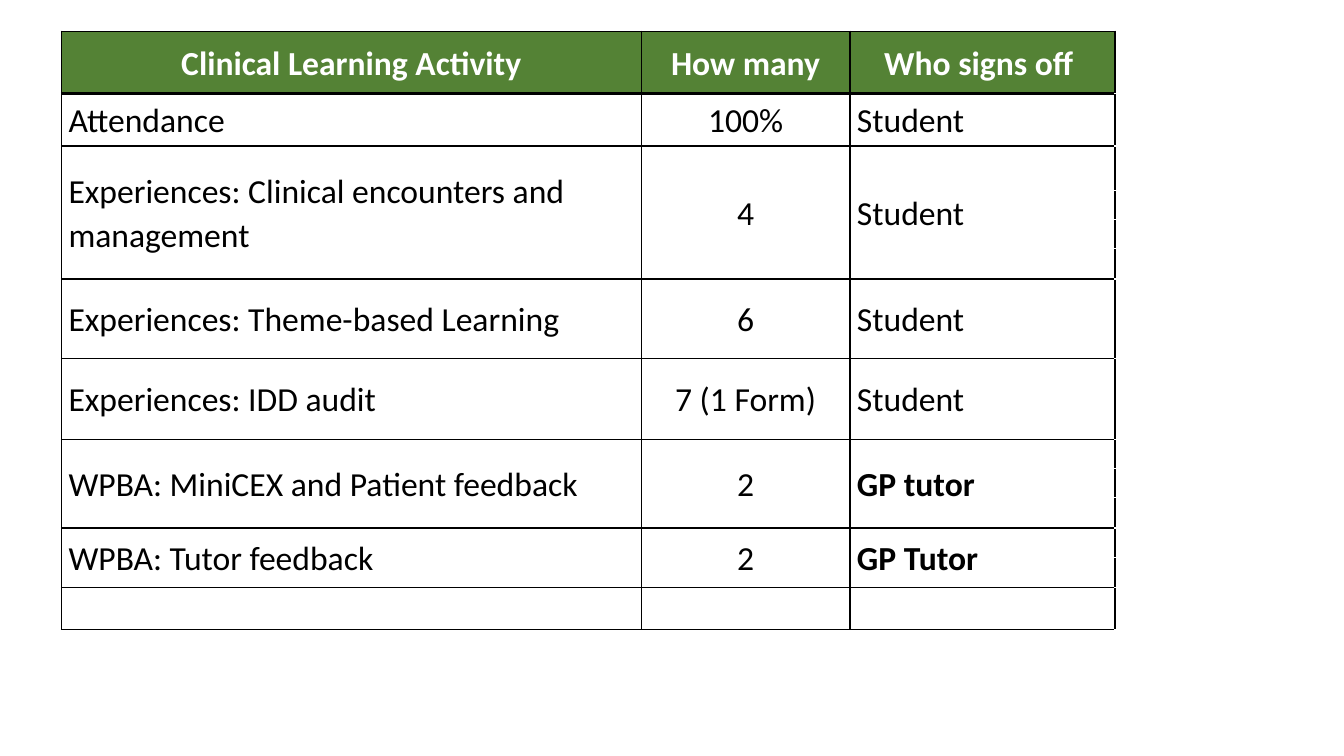
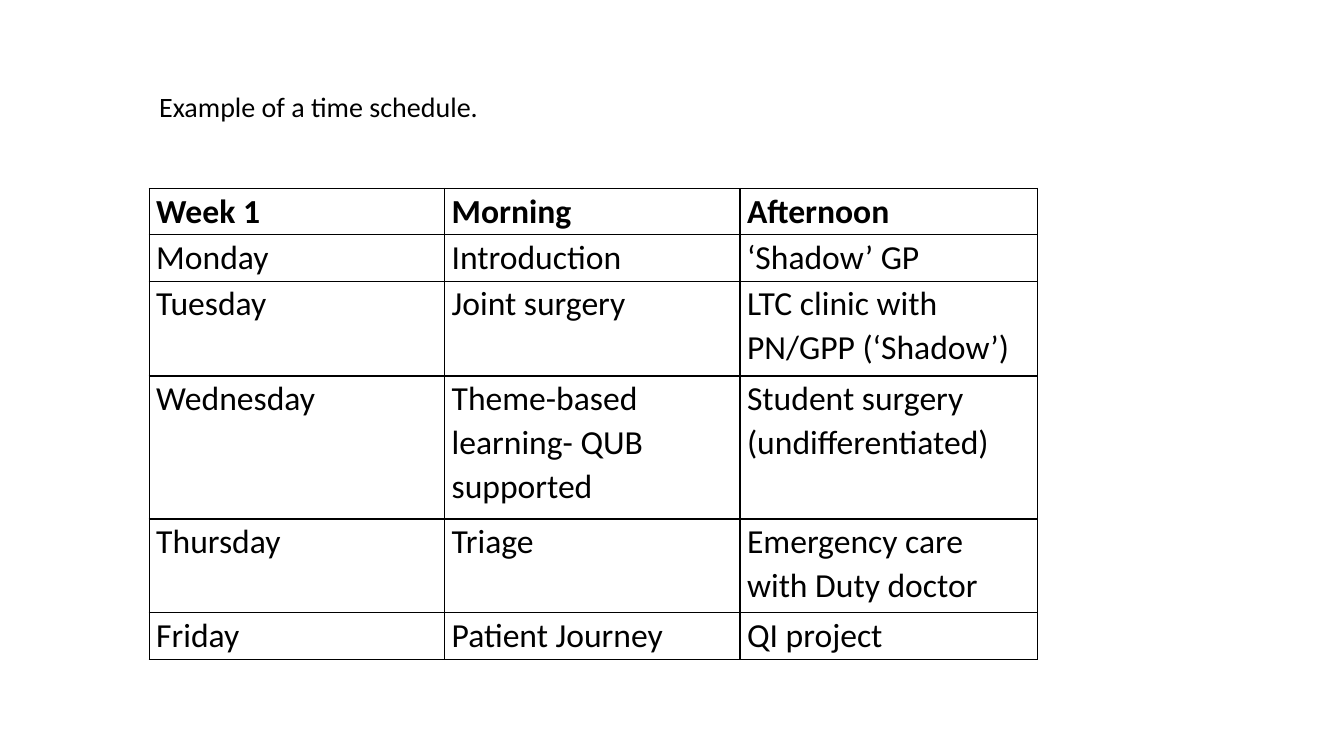
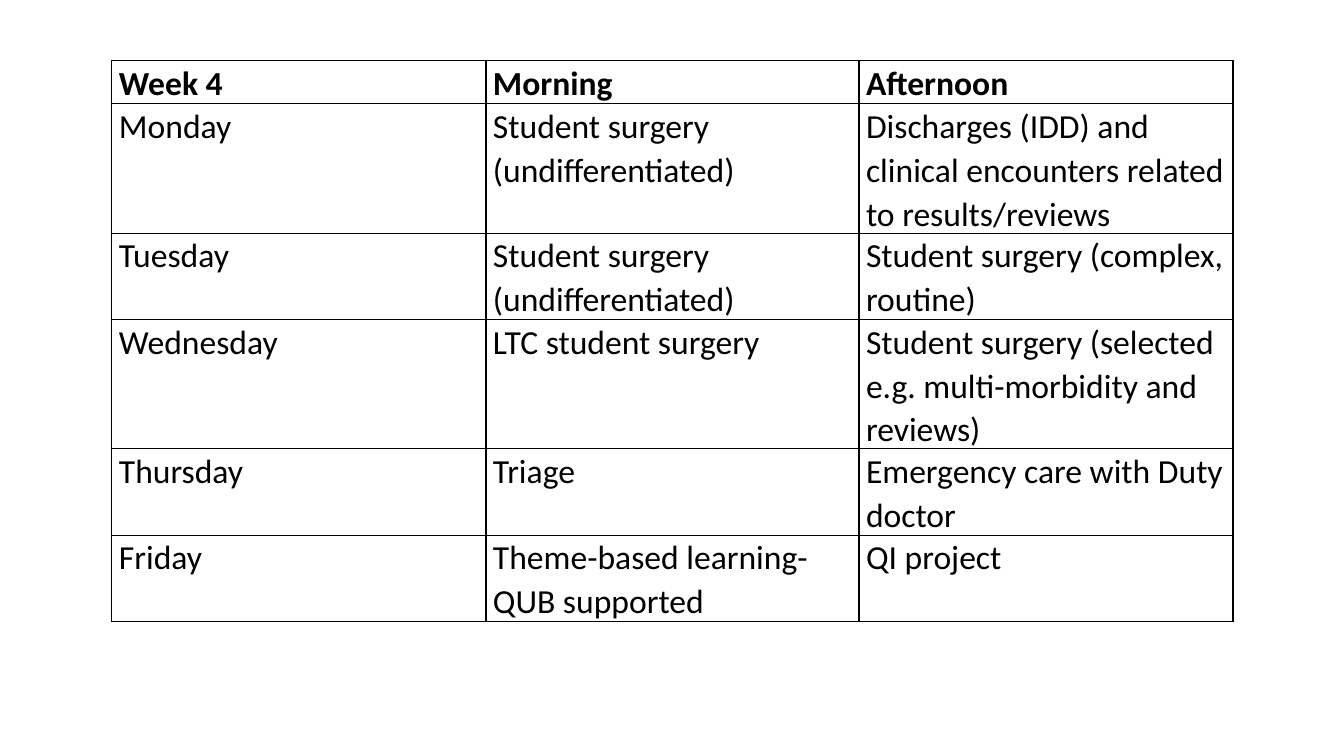
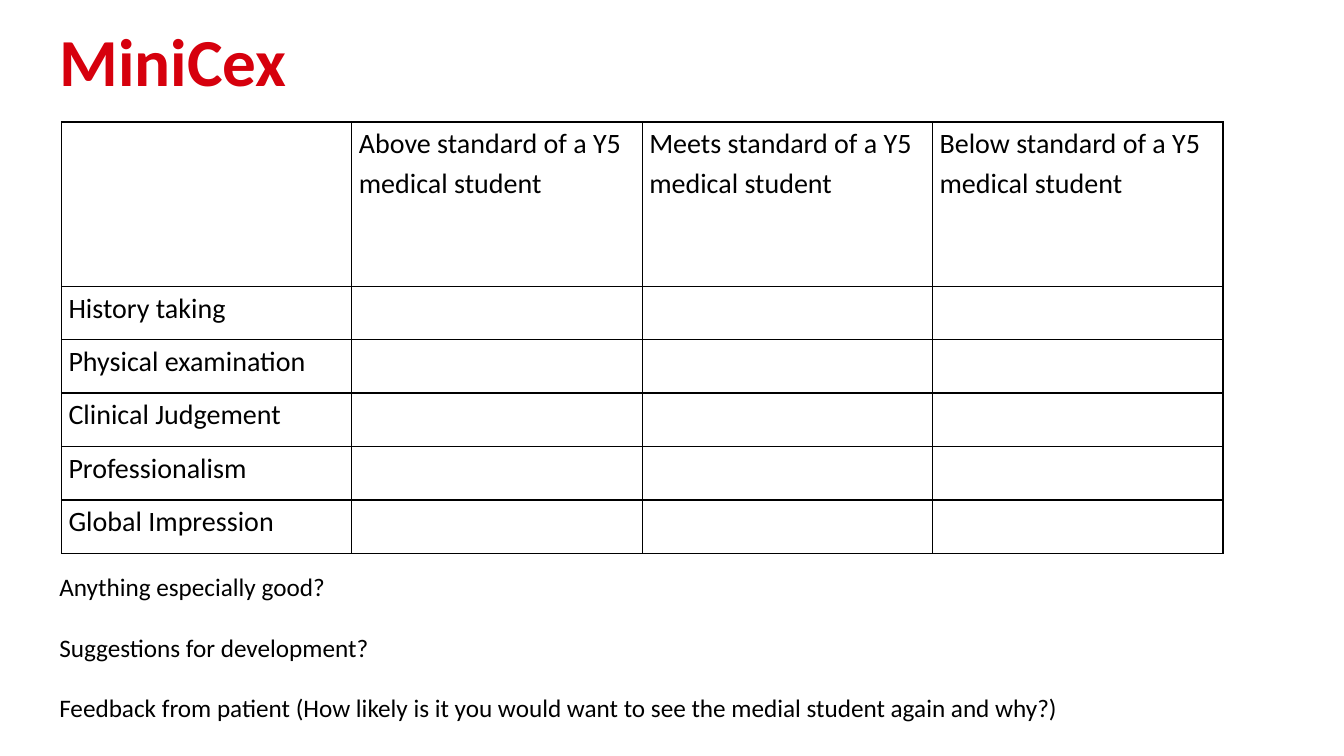
from dataclasses import dataclass

from lxml.etree import SubElement
from pptx import Presentation
from pptx.dml.color import RGBColor as Color
from pptx.enum.text import MSO_ANCHOR as Anchor, PP_ALIGN as Align
from pptx.oxml.ns import qn
from pptx.util import Inches, Pt


@dataclass(frozen=True)
class Theme:
    font: str = "Calibri"
    ink: str = "000000"
    white: str = "FFFFFF"
    green: str = "548235"
    red: str = "D6000D"
    title: int = 48
    large: int = 24
    medium: int = 20
    small: int = 18
    empty: int = 10
    thin: float = 1
    thick: float = 2.25
    side_inset: float = 0.07


THEME = Theme()


@dataclass(frozen=True)
class TableStyle:
    size: int = THEME.large
    line_spacing: float = 1.07
    inset: float = 0
    anchor: Anchor = Anchor.TOP
    bold_header: bool = True
    header_row: int = 0
    banner: bool = False  # green header with white centred text
    open_column: int = -1  # column without lines of its own
    centred_columns: tuple = ()
    bold_texts: tuple = ()


SCHEDULE = TableStyle()
CHECKLIST = TableStyle(inset=0.01, anchor=Anchor.MIDDLE, header_row=1, banner=True,
                       open_column=3, centred_columns=(1,),
                       bold_texts=("GP tutor", "GP Tutor"))
RATING = TableStyle(size=THEME.medium, line_spacing=1.15, bold_header=False)


def format_runs(para, size, color=THEME.ink, bold=False):
    for span in para.runs:
        font = span.font
        font.name, font.size, font.bold = THEME.font, Pt(size), bold
        font.color.rgb = Color.from_string(color)


# Tables
def edge_widths(row, column, style):
    """Give the line width of each edge that this cell draws."""
    if column == style.open_column:
        return {"a:lnL": THEME.thin} if row >= style.header_row else {}
    if row < style.header_row:
        return {"a:lnB": THEME.thin}
    below_banner = style.banner and row == style.header_row + 1
    in_banner = style.banner and row == style.header_row
    return {"a:lnL": THEME.thin, "a:lnR": THEME.thin,
            "a:lnT": THEME.thick if below_banner else THEME.thin,
            "a:lnB": THEME.thick if in_banner else THEME.thin}


def set_borders(cell, widths):
    """Draw the edges; they must precede the fill in the cell's XML."""
    properties = cell._tc.get_or_add_tcPr()
    for index, (tag, width) in enumerate(widths.items()):
        line = SubElement(properties, qn(tag), w=str(Pt(width)))
        fill = SubElement(line, qn("a:solidFill"))
        SubElement(fill, qn("a:srgbClr"), val=THEME.ink)
        properties.insert(index, line)


def fill_cell(cell, text, row, column, style):
    header = row == style.header_row
    banner = header and style.banner and column != style.open_column
    if banner:
        cell.fill.solid()
        cell.fill.fore_color.rgb = Color.from_string(THEME.green)
    else:
        cell.fill.background()
    set_borders(cell, edge_widths(row, column, style))
    cell.margin_left = cell.margin_right = Inches(THEME.side_inset)
    cell.margin_top = cell.margin_bottom = Inches(style.inset)
    para = cell.text_frame.paragraphs[0]
    if not text:
        # Small type keeps an empty cell from stretching its row
        SubElement(para._p, qn("a:endParaRPr"), sz=str(THEME.empty * 100))
        return
    cell.vertical_anchor = style.anchor
    para.text = text
    para.line_spacing, para.space_after = style.line_spacing, Pt(8)
    if banner or column in style.centred_columns:
        para.alignment = Align.CENTER
    format_runs(para, style.size, THEME.white if banner else THEME.ink,
                header and style.bold_header or text in style.bold_texts)


def add_grid(page, left, top, widths, heights, rows, style):
    table = page.shapes.add_table(
        len(heights), len(widths), Inches(left), Inches(top),
        Inches(sum(widths)), Inches(sum(heights))).table
    table.first_row = table.horz_banding = False
    for column, width in zip(table.columns, widths):
        column.width = Inches(width)
    for line, height in zip(table.rows, heights):
        line.height = Inches(height)
    for row, texts in enumerate(rows):
        for column, text in enumerate(texts):
            fill_cell(table.cell(row, column), text, row, column, style)
    return table


# Text boxes
def add_text(page, left, top, width, height, texts, size, color=THEME.ink,
             bold=False, line_spacing=None, gap=0):
    box = page.shapes.add_textbox(Inches(left), Inches(top), Inches(width), Inches(height))
    frame = box.text_frame
    frame.word_wrap = True
    for index, text in enumerate(texts):
        para = frame.add_paragraph() if index else frame.paragraphs[0]
        para.text = text
        para.line_spacing = line_spacing
        if index:
            para.space_before = Pt(gap)
        format_runs(para, size, color, bold)


# Slides
def build_activities(page):
    # Each entry: its texts, then the heights of the rows that it spans
    entries = [
        (("", "", ""), (0.31,)),
        (("Clinical Learning Activity", "How many", "Who signs off "), (0.62,)),
        (("Attendance", "100%", "Student"), (0.52,)),
        (("Experiences: Clinical encounters and management", "4", "Student"),
         (0.44, 0.29, 0.29, 0.3)),
        (("Experiences: Theme-based Learning", "6", "Student"), (0.79,)),
        (("Experiences: IDD audit", "7 (1 Form)", "Student"), (0.8,)),
        (("WPBA: MiniCEX and Patient feedback", "2", "GP tutor"), (0.29, 0.29, 0.3)),
        (("WPBA: Tutor feedback", "2", "GP Tutor"), (0.29, 0.3)),
        (("", "", ""), (0.42,)),
    ]
    rows, heights, spans = [], [], []
    for texts, parts in entries:
        spans.append((len(rows), len(rows) + len(parts) - 1))
        rows.append((*texts, ""))
        rows += [("",) * 4] * (len(parts) - 1)
        heights += parts
    table = add_grid(page, 0.61, 0, (5.75, 2.07, 2.63, 0.26), heights, rows, CHECKLIST)
    table.cell(0, 0).merge(table.cell(0, 2))
    for first, last in spans:
        if last > first:
            for column in range(3):
                table.cell(first, column).merge(table.cell(last, column))


def build_week_one(page):
    rows = [
        ("Week 1", "Morning", "Afternoon"),
        ("Monday", "Introduction", "‘Shadow’ GP"),
        ("Tuesday", "Joint surgery", "LTC clinic with PN/GPP (‘Shadow’)"),
        ("Wednesday", "Theme-based learning- QUB supported",
         "Student surgery (undifferentiated)"),
        ("Thursday", "Triage", "Emergency care with Duty doctor"),
        ("Friday", "Patient Journey", "QI project"),
    ]
    add_grid(page, 1.48, 1.87, (2.93, 2.93, 2.95),
             (0.46, 0.46, 0.94, 1.42, 0.93, 0.46), rows, SCHEDULE)
    add_text(page, 1.48, 0.84, 10.06, 0.44, ["Example of a time schedule."], THEME.medium)


def build_week_four(page):
    rows = [
        ("Week 4", "Morning", "Afternoon"),
        ("Monday", "Student surgery (undifferentiated)",
         "Discharges (IDD) and clinical encounters related to results/reviews"),
        ("Tuesday", "Student surgery (undifferentiated)", "Student surgery (complex, routine)"),
        ("Wednesday", "LTC student surgery",
         "Student surgery (selected e.g. multi-morbidity and reviews)"),
        ("Thursday", "Triage", "Emergency care with Duty doctor"),
        ("Friday", "Theme-based learning- QUB supported", "QI project"),
    ]
    add_grid(page, 1.11, 0.6, (3.71, 3.7, 3.71),
             (0.41, 1.25, 0.83, 0.95, 0.83, 0.41), rows, SCHEDULE)


def build_minicex(page):
    add_text(page, 0.49, 0.3, 7.49, 0.78, ["MiniCex"], THEME.title, THEME.red,
             bold=True, line_spacing=0.8)
    levels = ("Above", "Meets", "Below")
    skills = ("History taking", "Physical examination", "Clinical Judgement",
              "Professionalism", "Global Impression")
    rows = [("", *(f"{level} standard of a Y5 medical student" for level in levels))]
    rows += [(skill, "", "", "") for skill in skills]
    add_grid(page, 0.61, 1.21, [2.88] * 4, [1.63] + [0.53] * len(skills), rows, RATING)
    add_text(page, 0.49, 5.62, 10.13, 1.62, [
        "Anything especially good?",
        "Suggestions for development?",
        "Feedback from patient (How likely is it you would want to see the medial "
        "student again and why?)",
    ], THEME.small, gap=21.6)


def main():
    deck = Presentation()
    deck.slide_width, deck.slide_height = Inches(13.33), Inches(7.5)
    blank = deck.slide_layouts[6]
    for build in (build_activities, build_week_one, build_week_four, build_minicex):
        build(deck.slides.add_slide(blank))
    deck.save("out.pptx")


if __name__ == "__main__":
    main()
